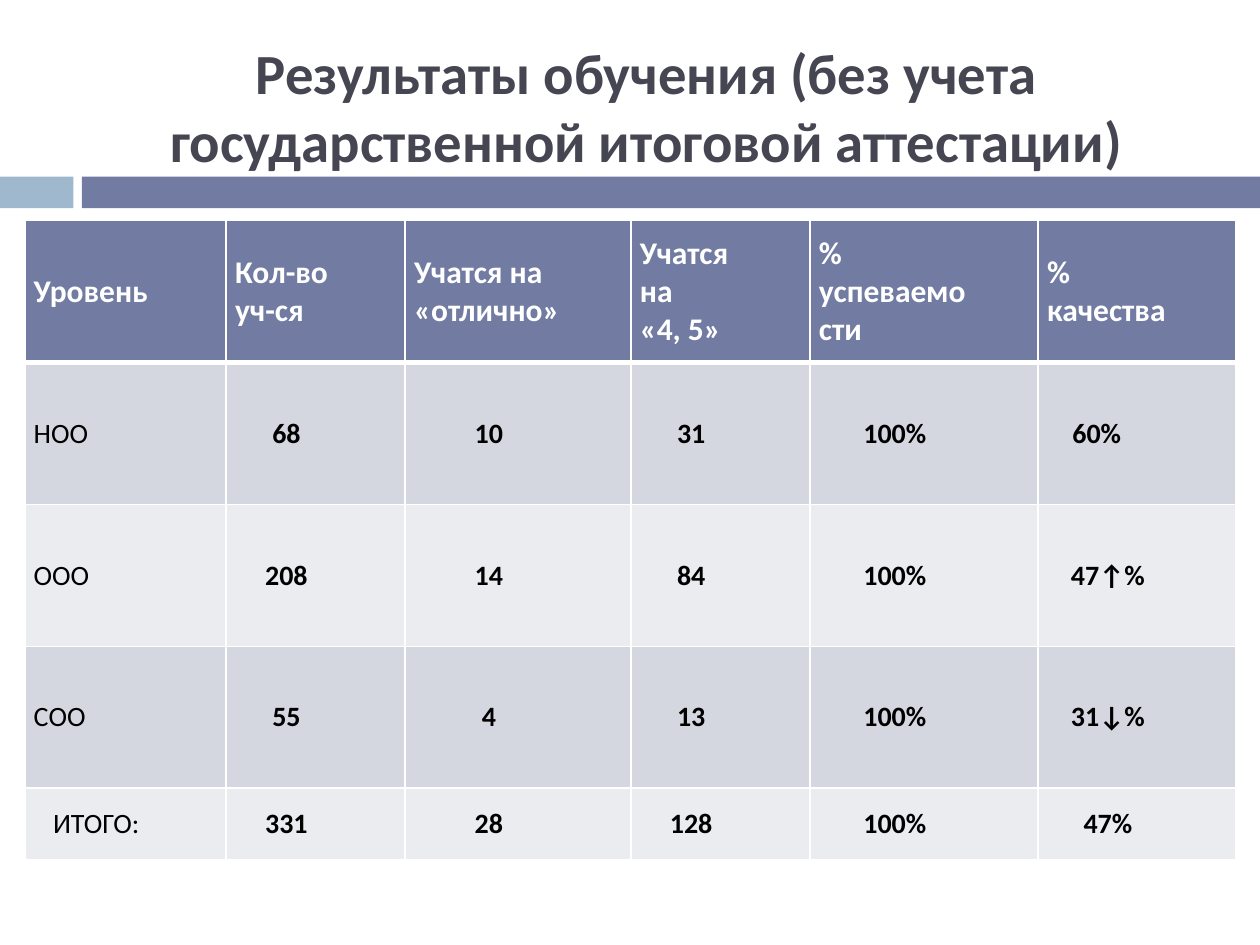
from lxml.etree import SubElement
from pptx import Presentation
from pptx.dml.color import RGBColor
from pptx.enum.shapes import MSO_SHAPE
from pptx.enum.text import MSO_ANCHOR, MSO_AUTO_SIZE, PP_ALIGN
from pptx.oxml.ns import qn
from pptx.util import Cm, Pt

FONT = "Calibri"
SLATE, SKY, WHITE = "727CA3", "9FB8CD", "FFFFFF"
BANDS = ("D5D7E0", "EBECF0")
COLUMNS = (4.06, 3.61, 4.55, 3.61, 4.6, 3.99)
ROWS = (2.86, 2.86, 2.86, 2.86, 1.44)
RESULTS = (
    ("Уровень", "Кол-во уч-ся", "Учатся на\n«отлично»", "Учатся на\n«4, 5»",
     "% успеваемости", "%\nкачества"),
    ("НОО", "68", "10", "31", "100%", "60%"),
    ("ООО", "208", "14", "84", "100%", "47↑%"),
    ("СОО", "55", "4", "13", "100%", "31↓%"),
    ("ИТОГО:", "331", "28", "128", "100%", "47%"),
)


def rgb(color):
    return RGBColor.from_string(color)


def write(tf, text, size, color="000000", bold=True, align=PP_ALIGN.LEFT, left=0, right=0):
    """Fill a text frame, one paragraph per line; indents are in cm."""
    for i, line in enumerate(text.split("\n")):
        p = tf.paragraphs[0] if i == 0 else tf.add_paragraph()
        p.alignment = align
        pPr = p._p.get_or_add_pPr()
        pPr.set("marL", str(Cm(left)))
        pPr.set("marR", str(Cm(right)))
        r = p.add_run()
        r.text = line
        r.font.name, r.font.size, r.font.bold = FONT, Pt(size), bold
        r.font.color.rgb = rgb(color)


def add_title(s, x, y, w, h):
    title = s.shapes.title
    title.left, title.top, title.width, title.height = Cm(x), Cm(y), Cm(w), Cm(h)
    tf = title.text_frame
    tf.word_wrap = True
    tf.auto_size = MSO_AUTO_SIZE.NONE
    tf.vertical_anchor = MSO_ANCHOR.TOP
    write(tf, "Результаты обучения (без учета государственной итоговой аттестации)",
          32.4, "464653", align=PP_ALIGN.CENTER)


def add_band(s, x, y, w, h):
    """Short and long bar with a gap between them."""
    short, gap = 1.48, 0.17
    long_start = short + gap
    for left, width, color in ((0, short, SKY), (long_start, w - long_start, SLATE)):
        bar = s.shapes.add_shape(MSO_SHAPE.RECTANGLE, Cm(x + left), Cm(y), Cm(width), Cm(h))
        bar.shadow.inherit = False
        bar.fill.solid()
        bar.fill.fore_color.rgb = rgb(color)
        bar.line.fill.background()


def set_borders(cell, top, bottom):
    tcPr = cell._tc.get_or_add_tcPr()
    for side, width in (("L", 1), ("R", 1), ("T", top), ("B", bottom)):
        ln = SubElement(tcPr, qn(f"a:ln{side}"), w=str(Pt(width)))
        SubElement(SubElement(ln, qn("a:solidFill")), qn("a:srgbClr"), val=WHITE)


def cell_format(row, col):
    if row == 0:
        return dict(size=18, color=WHITE)
    if col == 0:
        total = row == len(ROWS) - 1
        return dict(size=16, bold=False,
                    align=PP_ALIGN.CENTER if total else PP_ALIGN.JUSTIFY)
    if (row, col) == (1, 5):
        return dict(size=16, align=PP_ALIGN.JUSTIFY, left=0.51)
    return dict(size=16, align=PP_ALIGN.CENTER)


def add_results(s, x, y):
    table = s.shapes.add_table(len(ROWS), len(COLUMNS), Cm(x), Cm(y),
                               Cm(sum(COLUMNS)), Cm(sum(ROWS))).table
    for column, width in zip(table.columns, COLUMNS):
        column.width = Cm(width)
    for i, (row, height) in enumerate(zip(table.rows, ROWS)):
        row.height = Cm(height)
        for j, cell in enumerate(row.cells):
            # Thick rule under the header
            set_borders(cell, top=3 if i == 1 else 1, bottom=3 if i == 0 else 1)
            cell.fill.solid()
            cell.fill.fore_color.rgb = rgb(BANDS[(i - 1) % 2] if i else SLATE)
            cell.margin_left = cell.margin_right = Cm(0.18)
            cell.margin_top = cell.margin_bottom = 0
            cell.vertical_anchor = MSO_ANCHOR.MIDDLE
            write(cell.text_frame, RESULTS[i][j], right=1.18, **cell_format(i, j))


def main():
    prs = Presentation()
    prs.slide_width, prs.slide_height = Cm(25.4), Cm(19.05)
    s = prs.slides.add_slide(prs.slide_layouts[5])
    add_band(s, 0, 3.56, 25.4, 0.64)
    add_title(s, 1.7, 0.64, 22.66, 2.74)
    add_results(s, 0.5, 4.45)
    prs.save("out.pptx")


if __name__ == "__main__":
    main()
